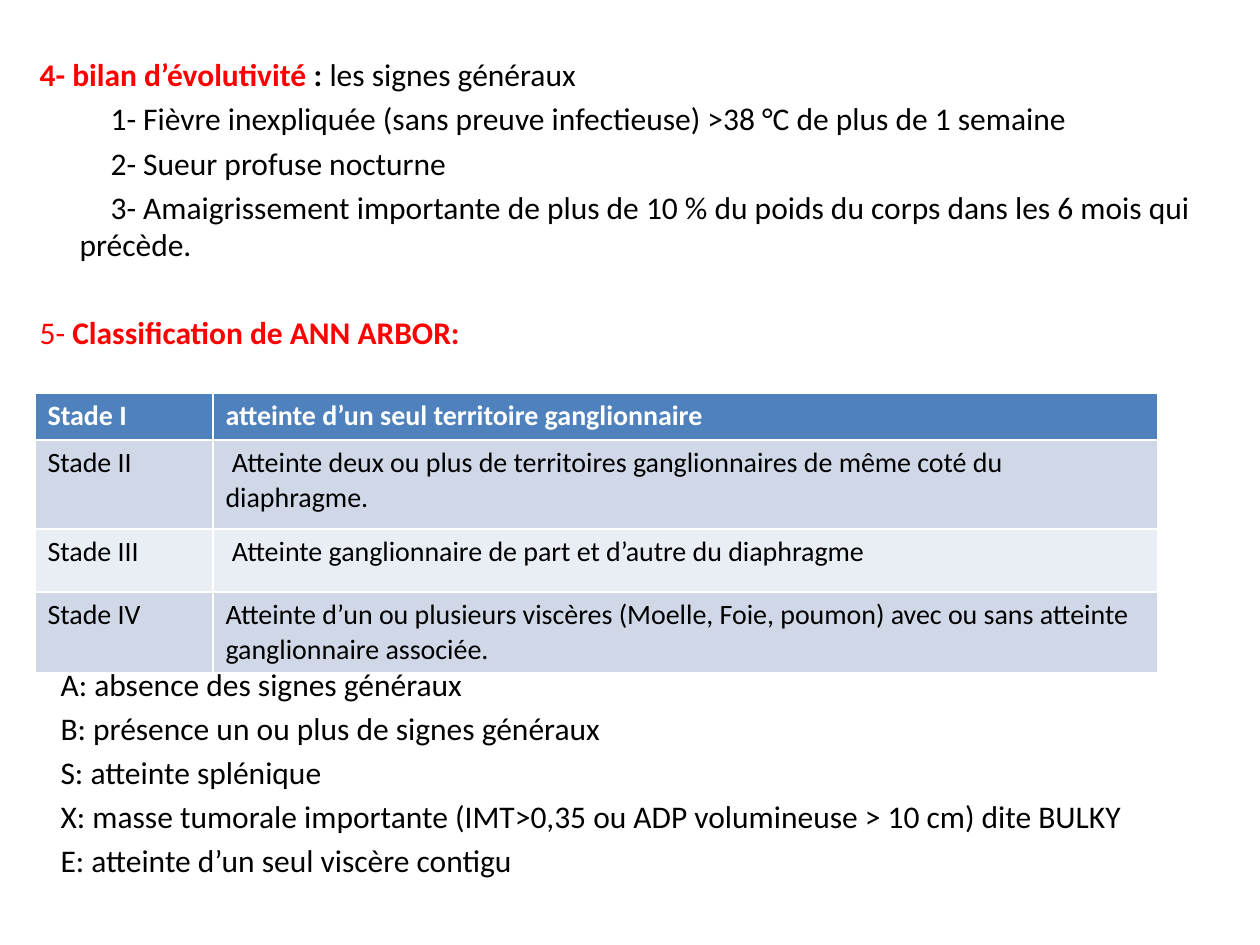
from lxml import etree
from pptx import Presentation
from pptx import util as u
from pptx.dml.color import RGBColor
from pptx.enum import text
from pptx.oxml import ns

RED = RGBColor(0xFF, 0x00, 0x00)
BLACK = RGBColor(0x00, 0x00, 0x00)
WHITE = RGBColor(0xFF, 0xFF, 0xFF)
HEADER_BLUE = RGBColor(0x4F, 0x81, 0xBD)
BAND_DARK = RGBColor(0xD0, 0xD8, 0xE8)
BAND_LIGHT = RGBColor(0xE9, 0xED, 0xF4)


def px(length):
    return u.Emu(round(length * 914400 / 126))


class SlideBuilder:
    font = "Calibri"
    body_size = u.Pt(18)
    table_size = u.Pt(16)

    def __init__(self, slide):
        self.slide = slide

    def add_run(self, paragraph, words, size, color=BLACK, bold=False):
        run = paragraph.add_run()
        run.text = words
        run.font.name = self.font
        run.font.size = size
        run.font.bold = bold
        run.font.color.rgb = color

    def body(self, left, top, width, height, paragraphs):
        """Each paragraph is (margin, first-line indent, space before, runs)."""
        shape = self.slide.placeholders[1]
        shape.left, shape.top = px(left), px(top)
        shape.width, shape.height = px(width), px(height)
        frame = shape.text_frame
        frame.word_wrap = True
        frame.auto_size = text.MSO_AUTO_SIZE.NONE
        for index, (margin, indent, space, runs) in enumerate(paragraphs):
            paragraph = frame.add_paragraph() if index else frame.paragraphs[0]
            if space:
                paragraph.space_before = u.Pt(space)
            properties = paragraph._p.get_or_add_pPr()
            properties.set("marL", str(px(margin)))
            properties.set("indent", str(px(indent)))
            etree.SubElement(properties, ns.qn("a:buNone"))
            for run in runs:
                self.add_run(paragraph, run[0], self.body_size, *run[1:])

    def table(self, left, top, widths, heights, rows):
        frame = self.slide.shapes.add_table(
            len(rows), len(widths), px(left), px(top),
            px(sum(widths)), px(sum(heights)))
        table = frame.table
        for column, width in zip(table.columns, widths):
            column.width = px(width)
        for index, (row, height, words) in enumerate(
                zip(table.rows, heights, rows)):
            row.height = px(height)
            header = index == 0
            band = BAND_DARK if index % 2 else BAND_LIGHT
            for cell, content in zip(row.cells, words):
                cell.fill.solid()
                cell.fill.fore_color.rgb = HEADER_BLUE if header else band
                self.add_run(cell.text_frame.paragraphs[0], content,
                             self.table_size, WHITE if header else BLACK,
                             header)


SIGNS = [
    "1- Fièvre inexpliquée (sans preuve infectieuse) >38 °C de plus de 1 semaine",
    "2- Sueur profuse nocturne",
    "3- Amaigrissement importante de plus de 10 % du poids du corps "
    "dans les 6 mois qui précède.",
]
STAGES = [
    ("Stade I", "atteinte d’un seul territoire ganglionnaire"),
    ("Stade II", " Atteinte deux ou plus de territoires ganglionnaires "
                 "de même coté du diaphragme."),
    ("Stade III", " Atteinte ganglionnaire de part et d’autre du diaphragme"),
    ("Stade IV", "Atteinte d’un ou plusieurs viscères (Moelle, Foie, poumon) "
                 "avec ou sans atteinte ganglionnaire associée."),
]
SUFFIXES = [
    "A: absence des signes généraux",
    "B: présence un ou plus de signes généraux",
    "S: atteinte splénique",
    "X: masse tumorale importante (IMT>0,35 ou ADP volumineuse > 10 cm) dite BULKY",
    "E: atteinte d’un seul viscère contigu",
]


def main():
    presentation = Presentation()
    presentation.slide_width, presentation.slide_height = px(1260), px(945)
    slide = presentation.slides.add_slide(presentation.slide_layouts[1])
    title = slide.shapes.title._element
    title.getparent().remove(title)
    builder = SlideBuilder(slide)

    # General signs, classification heading and suffix legend
    paragraphs = [(7, 0, None, [("4- bilan d’évolutivité ", RED, True),
                                (": ", BLACK, True),
                                ("les signes généraux",)])]
    paragraphs += [(47, 31, None, [(sign,)]) for sign in SIGNS]
    paragraphs.append((7, 0, 28.5, [("5- ", RED),
                                    ("Classification de ANN ARBOR:", RED, True)]))
    # The first suffix leaves room for the table
    paragraphs += [(28, 0, None if index else 179.5, [(suffix,)])
                   for index, suffix in enumerate(SUFFIXES)]
    builder.body(20, 49, 1193, 896, paragraphs)

    # Stage table
    builder.table(35, 393, [178, 945], [46, 89, 63, 80], STAGES)

    presentation.save("out.pptx")


if __name__ == "__main__":
    main()
